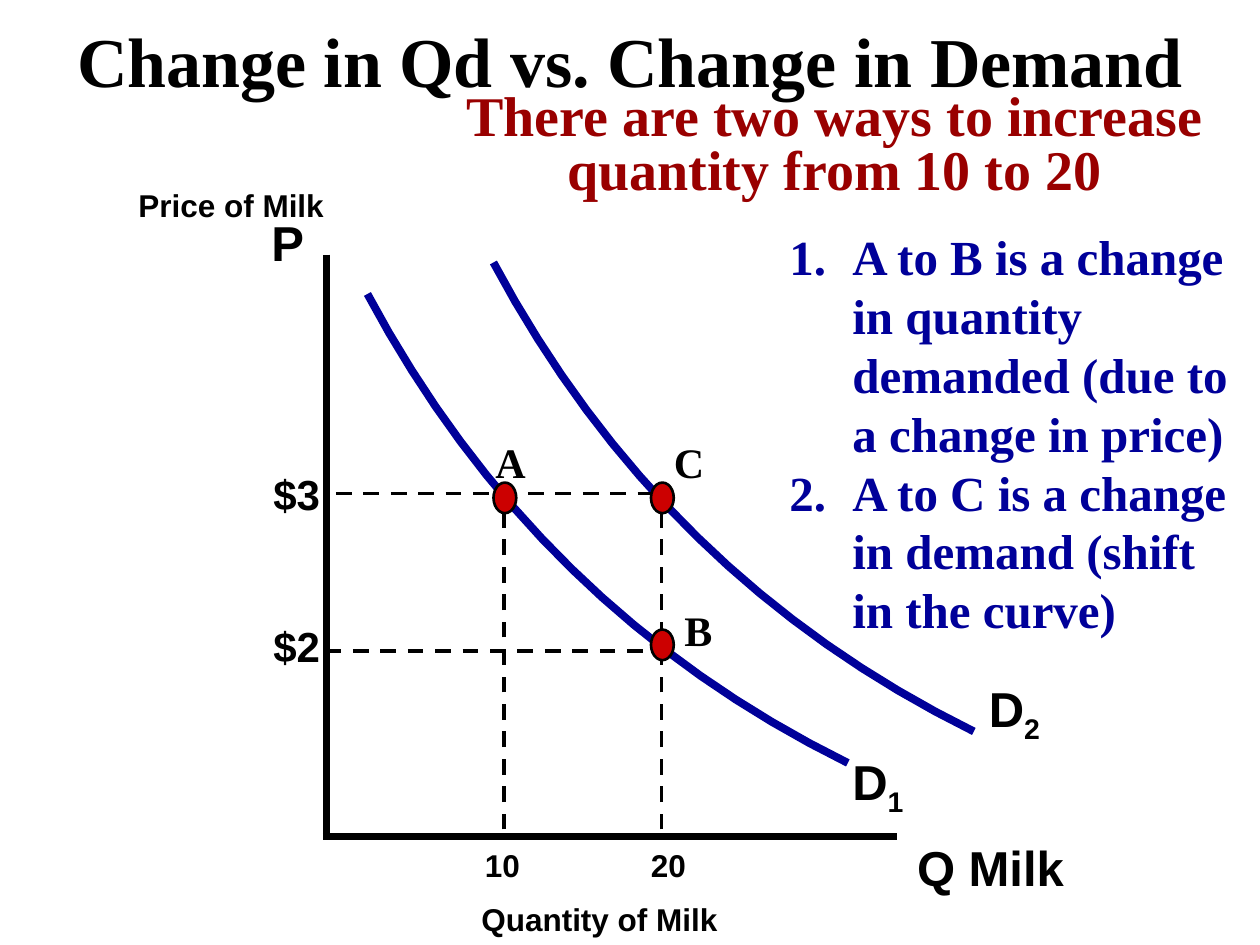
from lxml.etree import SubElement
from pptx import Presentation
from pptx.dml.color import RGBColor
from pptx.enum.dml import MSO_LINE
from pptx.enum.shapes import MSO_CONNECTOR, MSO_SHAPE
from pptx.enum.text import MSO_ANCHOR, PP_ALIGN
from pptx.oxml.ns import qn
from pptx.util import Pt

BLACK = RGBColor(0x00, 0x00, 0x00)
NAVY = RGBColor(0x00, 0x00, 0x99)
MAROON = RGBColor(0x99, 0x00, 0x00)
RED = RGBColor(0xCC, 0x00, 0x00)
SERIF, SANS = "Times New Roman", "Arial"
LEFT, CENTER, RIGHT = PP_ALIGN.LEFT, PP_ALIGN.CENTER, PP_ALIGN.RIGHT

# Content: text, left, top, width, height, size
TITLE = ("Change in Qd vs. Change in Demand", 0, 0, 720, 68, 40)
SUBTITLE = ("There are two ways to increase quantity from 10 to 20",
            240, 50, 474, 68, 32)
REASONS = [
    "A to B is a change in quantity demanded (due to a change in price)",
    "A to C is a change in demand (shift in the curve)",
]
AXIS_LABELS = [
    ("P", 148, 118, 33, 41, 28),
    ("Q Milk", 517, 475, 100, 41, 28),
    ("Price of Milk", 72, 103, 122, 29, 18),
    ("Quantity of Milk", 268, 511, 151, 29, 18),
]
PRICES = [("$3", 264), ("$2", 351)]           # text, top
QUANTITIES = [("10", 287), ("20", 382)]       # text, centre
POINT_LABELS = [("A", 276, 246), ("C", 378, 246), ("B", 384, 342)]
CURVE_LABELS = [("1", 480, 426), ("2", 558, 384)]

# Geometry: x1, y1, x2, y2
AXES = [(186.5, 145.5, 186.5, 480), (184.5, 478, 512.5, 478)]
GUIDES = [
    (288, 474, 288, 282),
    (378, 474, 378, 282),
    (192, 282, 384, 282),
    (186, 372, 378, 372),
]
CURVE_STARTS = [(210, 168), (282, 150)]
CURVE_CONTROL = (96, 180)                     # relative to the start
CURVE_END = (274.5, 268)
CURVE_STEPS = 16
DOTS = [(288.5, 284.5), (378.5, 284.5), (378.5, 368.5)]
DOT_WIDTH, DOT_HEIGHT = 13, 17.5


def add_span(para, text, size, font, color):
    span = para.add_run()
    span.text = text
    span.font.size = Pt(size)
    span.font.name = font
    span.font.bold = True
    span.font.color.rgb = color
    return span


def add_frame(page, left, top, width, height, anchor=MSO_ANCHOR.TOP):
    box = page.shapes.add_textbox(Pt(left), Pt(top), Pt(width), Pt(height))
    frame = box.text_frame
    frame.word_wrap = True
    frame.vertical_anchor = anchor
    return frame


def add_label(page, text, left, top, width, height, size, font=SANS,
              color=BLACK, align=LEFT, anchor=MSO_ANCHOR.TOP):
    para = add_frame(page, left, top, width, height, anchor).paragraphs[0]
    para.alignment = align
    add_span(para, text, size, font, color)
    return para


def add_line(page, ends, weight, dash=None):
    line = page.shapes.add_connector(MSO_CONNECTOR.STRAIGHT,
                                     *[Pt(value) for value in ends])
    line.line.color.rgb = BLACK
    line.line.width = Pt(weight)
    if dash:
        line.line.dash_style = dash
    SubElement(line._element.spPr, qn("a:effectLst"))


def add_curve(page, start):
    """Draw a quadratic curve as a chain of short segments."""
    points = []
    for step in range(CURVE_STEPS + 1):
        t = step / CURVE_STEPS
        points.append(tuple(
            Pt(origin + 2 * t * (1 - t) * control + t * t * end)
            for origin, control, end in zip(start, CURVE_CONTROL, CURVE_END)))
    builder = page.shapes.build_freeform(*points[0])
    builder.add_line_segments(points[1:], close=False)
    curve = builder.convert_to_shape()
    curve.shadow.inherit = False
    curve.fill.background()
    curve.line.color.rgb = NAVY
    curve.line.width = Pt(4.5)


def add_dot(page, x, y):
    dot = page.shapes.add_shape(
        MSO_SHAPE.OVAL, Pt(x - DOT_WIDTH / 2), Pt(y - DOT_HEIGHT / 2),
        Pt(DOT_WIDTH), Pt(DOT_HEIGHT))
    dot.shadow.inherit = False
    dot.fill.solid()
    dot.fill.fore_color.rgb = RED
    dot.line.color.rgb = BLACK
    dot.line.width = Pt(1.5)


def number_para(para):
    props = para._p.get_or_add_pPr()
    props.set("marL", str(Pt(36)))
    props.set("indent", str(-Pt(36)))
    bullet_color = SubElement(props, qn("a:buClr"))
    SubElement(bullet_color, qn("a:srgbClr"), val=str(NAVY))
    SubElement(props, qn("a:buAutoNum"), type="arabicPeriod")


def main():
    deck = Presentation()
    deck.slide_width, deck.slide_height = Pt(720), Pt(540)
    page = deck.slides.add_slide(deck.slide_layouts[6])

    # Graph: axes, demand curves, dashed guides, marked points
    for ends in AXES:
        add_line(page, ends, 4)
    for start in CURVE_STARTS:
        add_curve(page, start)
    for ends in GUIDES:
        add_line(page, ends, 2.25, MSO_LINE.DASH)
    for x, y in DOTS:
        add_dot(page, x, y)

    # Graph labels
    for label in AXIS_LABELS:
        add_label(page, *label)
    for text, top in PRICES:
        add_label(page, text, 126, top, 64, 36, 24, align=RIGHT)
    for text, center in QUANTITIES:
        add_label(page, text, center - 24, 480, 48, 29, 18, align=CENTER)
    for text, left, top in POINT_LABELS:
        add_label(page, text, left, top, 36, 36, 24, SERIF)
    for number, left, top in CURVE_LABELS:
        para = add_label(page, "D", left, top, 46, 41, 28)
        subscript = add_span(para, number, 28, SANS, BLACK)
        subscript.font._element.set("baseline", "-25000")

    # Headings
    add_label(page, *TITLE, SERIF, align=CENTER, anchor=MSO_ANCHOR.MIDDLE)
    para = add_label(page, *SUBTITLE, SERIF, MAROON, CENTER)
    para.line_spacing = 0.8

    # Numbered explanation
    frame = add_frame(page, 444, 126, 276, 243)
    for index, reason in enumerate(REASONS):
        para = frame.add_paragraph() if index else frame.paragraphs[0]
        number_para(para)
        add_span(para, reason, 28, SERIF, NAVY)

    deck.save("out.pptx")


if __name__ == "__main__":
    main()
